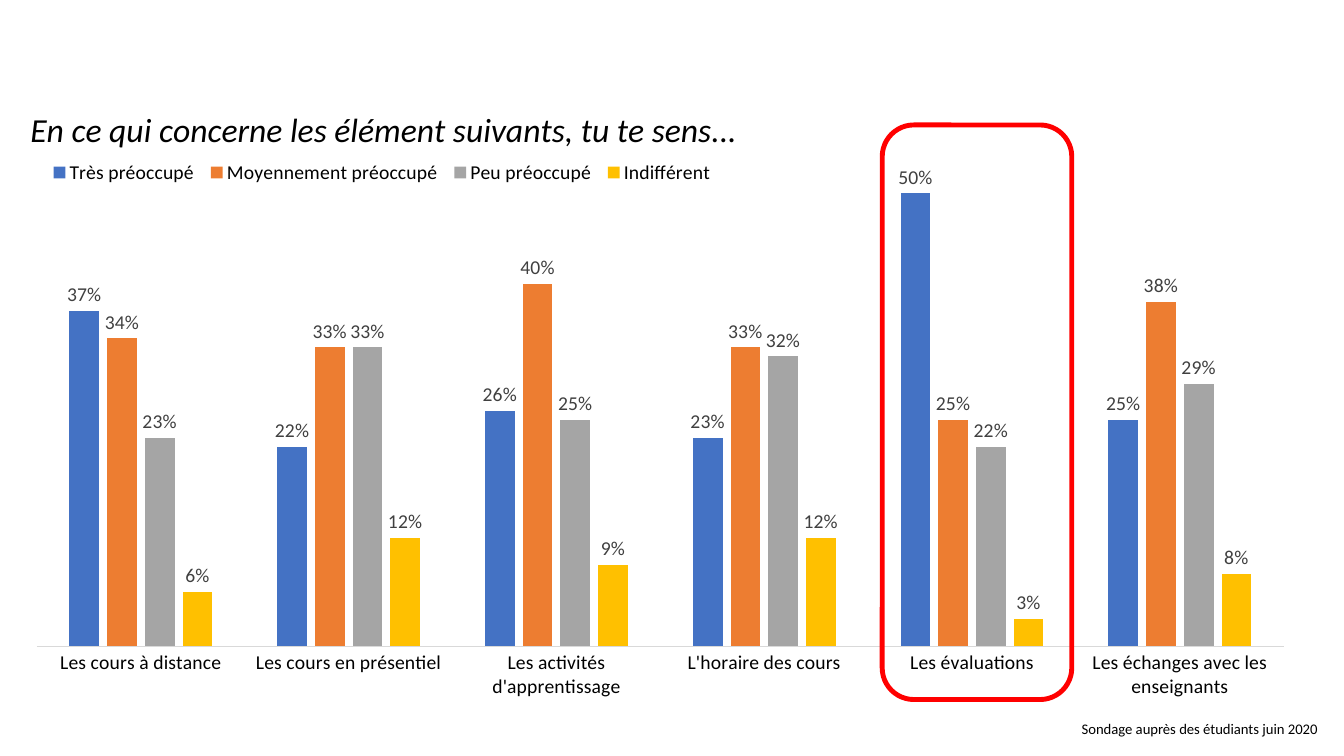
import pptx
import pptx.chart.data
import pptx.dml.color
import pptx.enum.chart
import pptx.enum.shapes
import pptx.oxml
import pptx.oxml.ns
import pptx.util

RGB = pptx.dml.color.RGBColor
BLACK = RGB(0x00, 0x00, 0x00)
DARK = RGB(0x40, 0x40, 0x40)
PALE = RGB(0xD9, 0xD9, 0xD9)
RED = RGB(0xFF, 0x00, 0x00)
BLUE = RGB(0x44, 0x72, 0xC4)
ORANGE = RGB(0xED, 0x7D, 0x31)
GRAY = RGB(0xA5, 0xA5, 0xA5)
GOLD = RGB(0xFF, 0xC0, 0x00)
FACE = "Calibri"

TITLE = "En ce qui concerne les élément suivants, tu te sens..."
SOURCE = "Sondage auprès des étudiants juin 2020"
TOPICS = ["Les cours à distance", "Les cours en présentiel",
          "Les activités d'apprentissage", "L'horaire des cours",
          "Les évaluations", "Les échanges avec les enseignants"]
LEVELS = [
    ("Très préoccupé", BLUE, (0.37, 0.22, 0.26, 0.23, 0.50, 0.25)),
    ("Moyennement préoccupé", ORANGE, (0.34, 0.33, 0.40, 0.33, 0.25, 0.38)),
    ("Peu préoccupé", GRAY, (0.23, 0.33, 0.25, 0.32, 0.22, 0.29)),
    ("Indifférent", GOLD, (0.06, 0.12, 0.09, 0.12, 0.03, 0.08)),
]

# Left, top, width, height in inches
CHART = (0.24, 0.44, 12.67, 7.06)
FRAME = (8.75, 1.24, 1.88, 5.7)
NOTE = (10.63, 7.09, 2.59, 0.28)

# Shares of the chart's own size
PLOT = {"x": 0.01, "y": 0.082, "w": 0.976, "h": 0.764}
HEAD = {"x": 0.0, "y": 0.08}
KEY = {"x": 0.015, "y": 0.16, "w": 0.53, "h": 0.04}


def inches(box):
    return [pptx.util.Inches(n) for n in box]


def style(font, size, color=BLACK, italic=False):
    font.name = FACE
    font.size = pptx.util.Pt(size)
    font.bold = False
    font.italic = italic
    font.color.rgb = color


def write(frame, text, **form):
    run = frame.paragraphs[0].add_run()
    run.text = text
    style(run.font, **form)


def place(part, after, shares, inner=False):
    """Give a chart part a manual layout, right after the named child."""
    qn = pptx.oxml.ns.qn
    old = part.find(qn("c:layout"))
    if old is not None:
        part.remove(old)
    marks = '<c:layoutTarget val="inner"/>' if inner else ""
    marks += "".join(f'<c:{k}Mode val="edge"/>' for k in "xy")
    marks += "".join(f'<c:{k} val="{v}"/>' for k, v in shares.items())
    space = pptx.oxml.ns.nsdecls("c")
    layout = pptx.oxml.parse_xml(
        f"<c:layout {space}><c:manualLayout>{marks}</c:manualLayout></c:layout>")
    if after:
        part.find(qn(after)).addnext(layout)
    else:
        part.insert(0, layout)


def draw_chart(slide):
    kinds = pptx.enum.chart
    data = pptx.chart.data.CategoryChartData(number_format="0%")
    data.categories = TOPICS
    for name, _, shares in LEVELS:
        data.add_series(name, shares)
    chart = slide.shapes.add_chart(
        kinds.XL_CHART_TYPE.COLUMN_CLUSTERED, *inches(CHART), data).chart
    style(chart.font, 10)

    chart.has_title = True
    write(chart.chart_title.text_frame, TITLE, size=24, italic=True)
    chart.has_legend = True
    chart.legend.position = kinds.XL_LEGEND_POSITION.BOTTOM
    chart.legend.include_in_layout = False
    style(chart.legend.font, 14)

    topics, values = chart.category_axis, chart.value_axis
    topics.major_tick_mark = kinds.XL_TICK_MARK.NONE
    topics.format.line.color.rgb = PALE
    topics.format.line.width = pptx.util.Pt(0.75)
    style(topics.tick_labels.font, 14)
    values.visible = False
    values.has_major_gridlines = False
    values.minimum_scale, values.maximum_scale = 0, 0.6

    plot = chart.plots[0]
    plot.gap_width, plot.overlap = 219, -27
    plot.vary_by_categories = False
    for bars, (_, color, _) in zip(plot.series, LEVELS):
        bars.format.fill.solid()
        bars.format.fill.fore_color.rgb = color
        labels = bars.data_labels
        labels.show_value = True
        labels.position = kinds.XL_LABEL_POSITION.OUTSIDE_END
        labels.number_format = "0%"
        labels.number_format_is_linked = False
        style(labels.font, 14, DARK)

    root = chart.element.find(pptx.oxml.ns.qn("c:chart"))
    for tag, after, shares in (("c:title", "c:tx", HEAD),
                               ("c:plotArea", None, PLOT),
                               ("c:legend", "c:legendPos", KEY)):
        place(root.find(pptx.oxml.ns.qn(tag)), after, shares, shares is PLOT)


def draw_frame(slide):
    shape = slide.shapes.add_shape(
        pptx.enum.shapes.MSO_SHAPE.ROUNDED_RECTANGLE, *inches(FRAME))
    shape.shadow.inherit = False
    shape.fill.background()
    shape.line.color.rgb = RED
    shape.line.width = pptx.util.Pt(3.5)


def main():
    deck = pptx.Presentation()
    deck.slide_width, deck.slide_height = inches((13.33, 7.5))
    slide = deck.slides.add_slide(deck.slide_layouts[6])
    draw_chart(slide)
    draw_frame(slide)
    note = slide.shapes.add_textbox(*inches(NOTE)).text_frame
    note.word_wrap = False
    write(note, SOURCE, size=10.5)
    deck.save("out.pptx")


if __name__ == "__main__":
    main()
